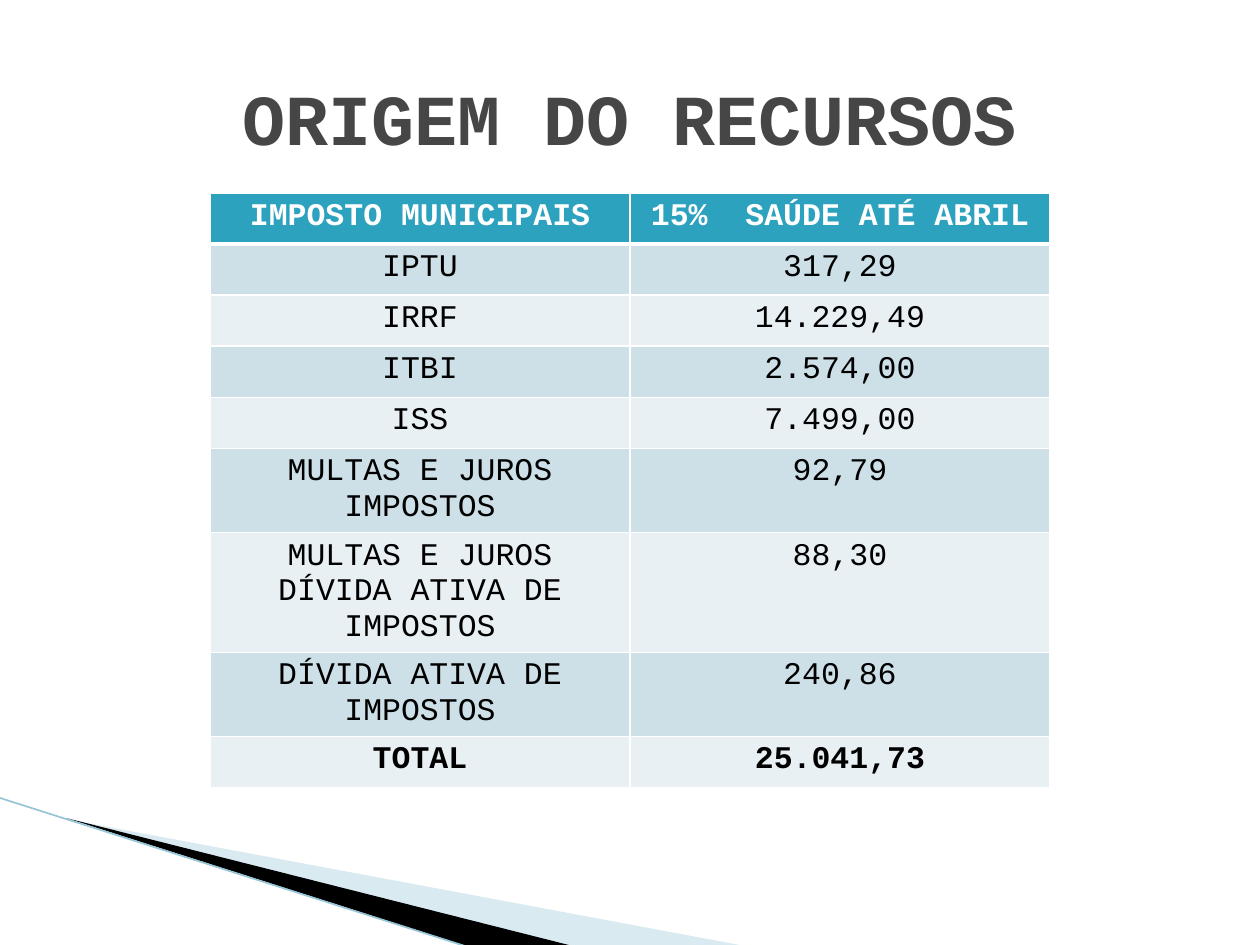
import dataclasses

import lxml.etree
import pptx
import pptx.dml.color
import pptx.enum.shapes
import pptx.enum.text
import pptx.oxml.ns
import pptx.util

Pt = pptx.util.Pt
qn = pptx.oxml.ns.qn


@dataclasses.dataclass(frozen=True)
class Theme:
    font: str = "Courier New"
    title_size: float = 41
    table_size: float = 18
    title: str = "464646"
    header: str = "2DA2BF"
    bands: tuple = ("CDE0E8", "E8F0F4")
    body_text: str = "000000"
    white: str = "FFFFFF"
    pale_wedge: str = "A0CBDC"
    dark_wedge: str = "000000"
    edge: str = "97C5D8"


THEME = Theme()

TAXES = [
    ("IMPOSTO MUNICIPAIS", "15%  SAÚDE ATÉ ABRIL"),
    ("IPTU", "317,29"),
    ("IRRF", "14.229,49"),
    ("ITBI", "2.574,00"),
    ("ISS", "7.499,00"),
    ("MULTAS E JUROS IMPOSTOS", "92,79"),
    ("MULTAS E JUROS DÍVIDA ATIVA DE IMPOSTOS", "88,30"),
    ("DÍVIDA ATIVA DE IMPOSTOS", "240,86"),
    ("TOTAL", "25.041,73"),
]


def rgb(color):
    return pptx.dml.color.RGBColor.from_string(color)


def write(frame, text, *, size, color, bold=False):
    frame.word_wrap = True
    paragraph = frame.paragraphs[0]
    paragraph.alignment = pptx.enum.text.PP_ALIGN.CENTER
    run = paragraph.add_run()
    run.text = text
    run.font.name = THEME.font
    run.font.size = Pt(size)
    run.font.bold = bold
    run.font.color.rgb = rgb(color)


def place_title(slide, left, top, width, height):
    title = slide.shapes.title
    title.left, title.top = Pt(left), Pt(top)
    title.width, title.height = Pt(width), Pt(height)
    title.text_frame.vertical_anchor = pptx.enum.text.MSO_ANCHOR.MIDDLE
    write(title.text_frame, "ORIGEM DO RECURSOS",
          size=THEME.title_size, color=THEME.title, bold=True)


def add_wedge(slide, left, top, corners, color, opacity=100):
    points = [(Pt(left + x), Pt(top + y)) for x, y in corners]
    builder = slide.shapes.build_freeform(*points[0])
    builder.add_line_segments(points[1:], close=True)
    wedge = builder.convert_to_shape()
    wedge.shadow.inherit = False
    wedge.line.fill.background()
    wedge.fill.solid()
    wedge.fill.fore_color.rgb = rgb(color)
    if opacity < 100:
        tint = next(wedge.fill._xPr.iter(qn("a:srgbClr")))
        lxml.etree.SubElement(tint, qn("a:alpha"), val=str(opacity * 1000))


def draw_corner(slide, left, top, width, height):
    add_wedge(slide, left, top, [(40, 12.5), (width, height), (328, height)],
              THEME.pale_wedge, opacity=40)
    add_wedge(slide, left, top, [(38, 11.5), (329, height), (268, height)],
              THEME.dark_wedge)
    edge = slide.shapes.add_connector(
        pptx.enum.shapes.MSO_CONNECTOR.STRAIGHT,
        Pt(left), Pt(top), Pt(left + 267), Pt(top + height))
    edge.line.color.rgb = rgb(THEME.edge)
    edge.line.width = Pt(0.95)
    lxml.etree.SubElement(edge._element.spPr, qn("a:effectLst"))


def set_borders(cell, **widths):
    properties = cell._tc.get_or_add_tcPr()
    for position, side in enumerate("LRTB"):
        border = lxml.etree.Element(qn("a:ln" + side), w=str(Pt(widths.get(side, 1))))
        fill = lxml.etree.SubElement(border, qn("a:solidFill"))
        lxml.etree.SubElement(fill, qn("a:srgbClr"), val=THEME.white)
        properties.insert(position, border)


def place_taxes(slide, left, top, width, height):
    rows, columns = len(TAXES), len(TAXES[0])
    taxes = slide.shapes.add_table(
        rows, columns, Pt(left), Pt(top), Pt(width), Pt(height)).table
    for row, entries in enumerate(TAXES):
        header, total = row == 0, row == rows - 1
        for column, entry in enumerate(entries):
            cell = taxes.cell(row, column)
            cell.fill.solid()
            cell.fill.fore_color.rgb = rgb(
                THEME.header if header else THEME.bands[(row - 1) % 2])
            set_borders(cell, T=3 if row == 1 else 1, B=3 if header else 1)
            write(cell.text_frame, entry, size=THEME.table_size,
                  color=THEME.white if header else THEME.body_text,
                  bold=header or total)


def main():
    deck = pptx.Presentation()
    deck.slide_width, deck.slide_height = Pt(720), Pt(540)
    slide = deck.slides.add_slide(deck.slide_layouts[5])
    draw_corner(slide, 0, 456, 428, 85)
    place_title(slide, 36, 21.6, 648, 90)
    place_taxes(slide, 120, 110.25, 480, 262.8)
    deck.save("out.pptx")


if __name__ == "__main__":
    main()
